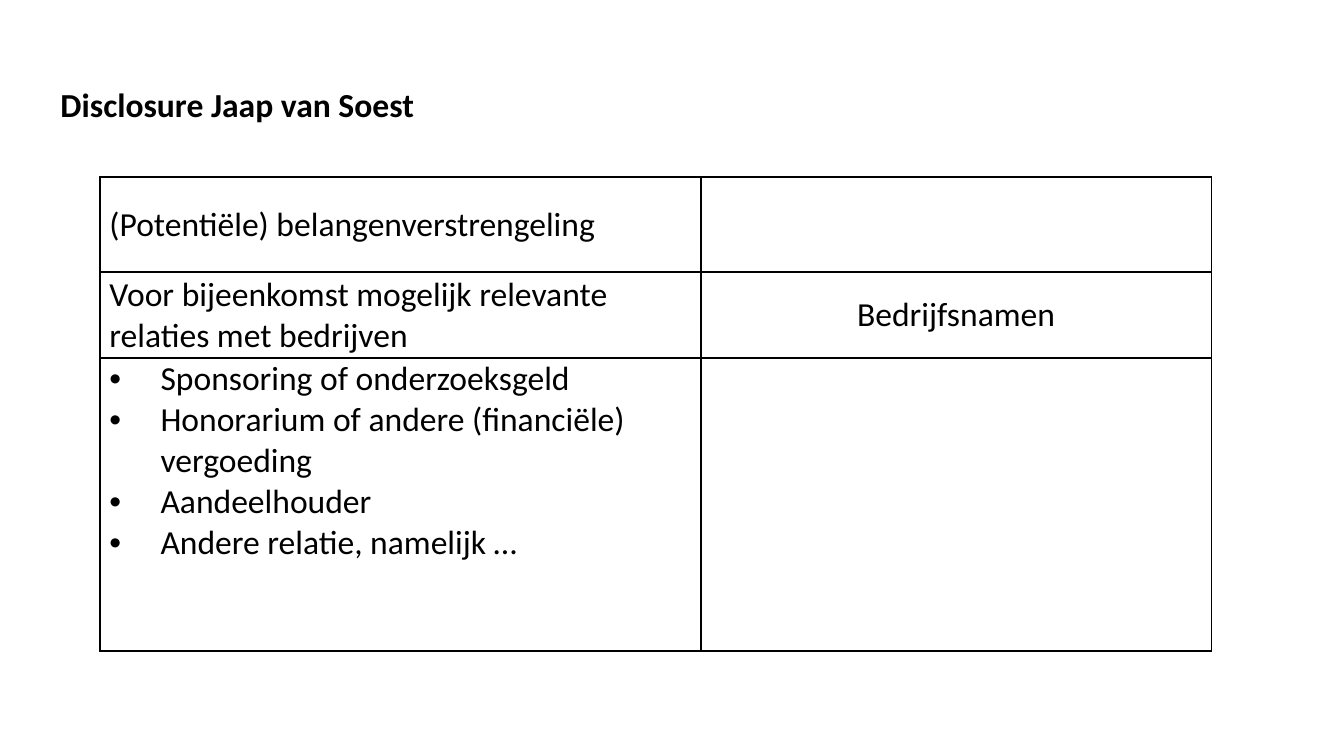
import pptx
import pptx.dml.color
import pptx.enum.text
import pptx.oxml
import pptx.oxml.ns
import pptx.util

WIDTH = 10
HEIGHT = WIDTH * 9 / 16
COLUMN, ROW = WIDTH / 100, HEIGHT / 100
FONT, TEXT_SIZE = "Calibri", 18
BLACK, WHITE = "000000", "FFFFFF"
COLUMNS = [4.47, 3.8]
ROWS = [0.71, 0.64, 2.18]
HEADINGS = [
    ["(Potentiële) belangenverstrengeling", ""],
    ["Voor bijeenkomst mogelijk relevante relaties met bedrijven", "Bedrijfsnamen"],
]
RELATIONS = [
    "Sponsoring of onderzoeksgeld",
    "Honorarium of andere (financiële) vergoeding",
    "Aandeelhouder",
    "Andere relatie, namelijk …",
]
CELLS = HEADINGS + [["\n".join(RELATIONS), ""]]


def colour(value):
    """Turn a hex string into a colour."""
    return pptx.dml.color.RGBColor.from_string(value)


def format_text(frame, bold=False, align=pptx.enum.text.PP_ALIGN.LEFT):
    """Give every paragraph and run the slide's text style."""
    for para in frame.paragraphs:
        para.alignment = align
        para.font.size = pptx.util.Pt(TEXT_SIZE)
        for span in para.runs:
            span.font.name = FONT
            span.font.size = pptx.util.Pt(TEXT_SIZE)
            span.font.bold = bold
            span.font.color.rgb = colour(BLACK)


def add_bullet(para, indent):
    """Give a paragraph a hanging round bullet."""
    properties = para._p.get_or_add_pPr()
    properties.set("marL", str(pptx.util.Inches(indent)))
    properties.set("indent", str(-pptx.util.Inches(indent)))
    namespace = pptx.oxml.ns.nsdecls("a")
    bullet_tags = [
        pptx.oxml.parse_xml(f"<a:{tag} {namespace}/>")
        for tag in ('buFont typeface="Arial"', 'buChar char="•"')
    ]
    for position, tag in enumerate(bullet_tags):
        properties.insert(position, tag)


def add_borders(cell, width):
    """Draw a black line on all four sides of a cell."""
    properties = cell._tc.get_or_add_tcPr()
    namespace = pptx.oxml.ns.nsdecls("a")
    for side in ("lnL", "lnR", "lnT", "lnB"):
        properties.append(pptx.oxml.parse_xml(
            f'<a:{side} {namespace} w="{pptx.util.Pt(width)}"><a:solidFill>'
            f'<a:srgbClr val="{BLACK}"/></a:solidFill></a:{side}>'))


def place_title(page, left, top, width, height):
    """Move the title placeholder into its box and fill it."""
    title = page.shapes.title
    title.left, title.top, title.width, title.height = map(
        pptx.util.Inches, (left, top, width, height))
    title.text_frame.text = "Disclosure Jaap van Soest"
    title.text_frame.vertical_anchor = pptx.enum.text.MSO_ANCHOR.MIDDLE
    format_text(title.text_frame, bold=True)


def style_cell(cell, text, is_list, align):
    """Fill one table cell and set its frame and text."""
    add_borders(cell, 1)
    cell.fill.solid()
    cell.fill.fore_color.rgb = colour(WHITE)
    cell.margin_left = cell.margin_right = pptx.util.Inches(0.07)
    cell.margin_top = cell.margin_bottom = 0
    anchors = pptx.enum.text.MSO_ANCHOR
    cell.vertical_anchor = anchors.TOP if is_list else anchors.MIDDLE
    cell.text_frame.text = text
    format_text(cell.text_frame, align=align)
    if is_list and text:
        for para in cell.text_frame.paragraphs:
            add_bullet(para, 0.38)


def place_table(page, left, top):
    """Build the disclosure table from its top left corner."""
    box = page.shapes.add_table(
        len(ROWS), len(COLUMNS),
        *map(pptx.util.Inches, (left, top, sum(COLUMNS), sum(ROWS))))
    table = box.table
    table.first_row = table.horz_banding = False
    for column, width in zip(table.columns, COLUMNS):
        column.width = pptx.util.Inches(width)
    for row, height in zip(table.rows, ROWS):
        row.height = pptx.util.Inches(height)
    aligns = [pptx.enum.text.PP_ALIGN.LEFT, pptx.enum.text.PP_ALIGN.CENTER]
    for row_index, texts in enumerate(CELLS):
        for column_index, text in enumerate(texts):
            style_cell(table.cell(row_index, column_index), text,
                       row_index == len(HEADINGS), aligns[column_index])


def main():
    """Build and save the slide."""
    deck = pptx.Presentation()
    deck.slide_width = pptx.util.Inches(WIDTH)
    deck.slide_height = pptx.util.Inches(HEIGHT)
    page = deck.slides.add_slide(deck.slide_layouts.get_by_name("Title Only"))
    place_title(page, 3.5 * COLUMN, 10 * ROW, 93.1 * COLUMN, 7.6 * ROW)
    place_table(page, 7.45 * COLUMN, 23.4 * ROW)
    deck.save("out.pptx")


if __name__ == "__main__":
    main()
